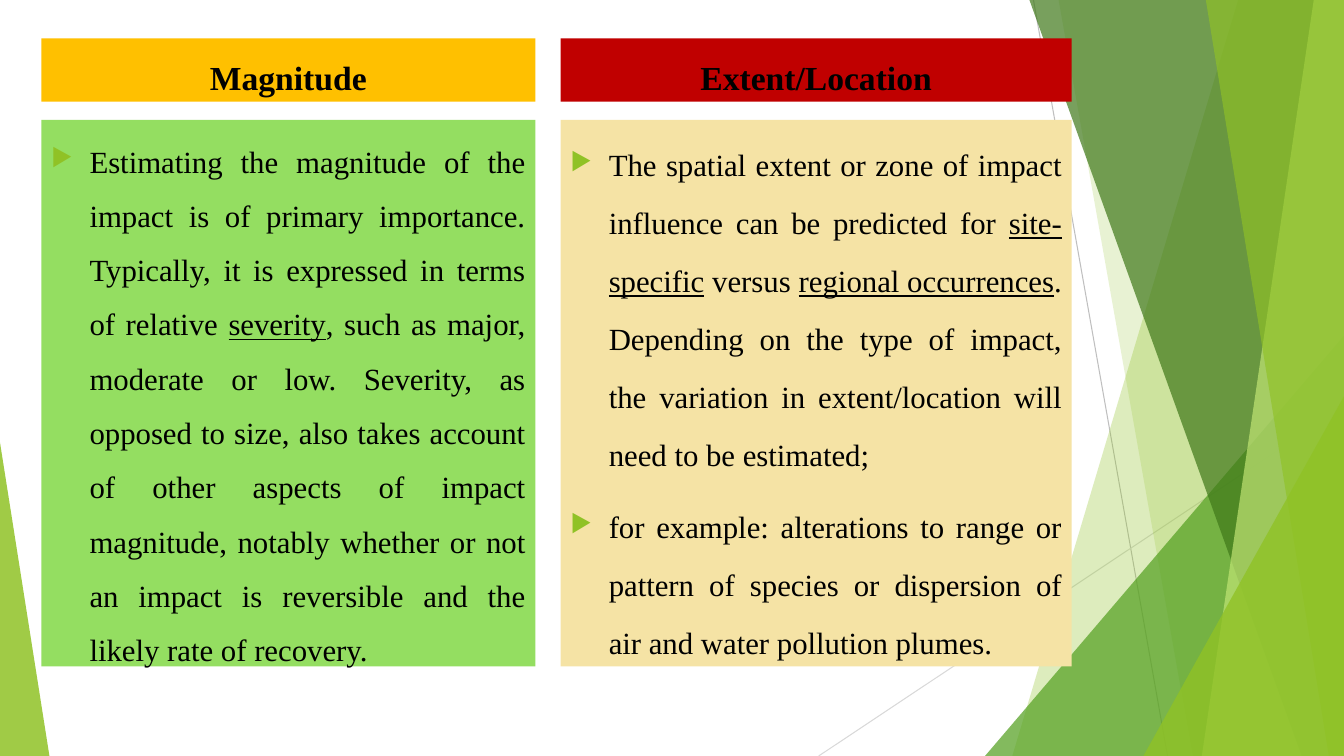
import pptx
import pptx.dml.color
import pptx.enum.shapes
import pptx.enum.text
import pptx.oxml
import pptx.oxml.ns
import pptx.util
from pptx.util import Inches

RGBColor = pptx.dml.color.RGBColor
Shape = pptx.enum.shapes.MSO_SHAPE
Anchor = pptx.enum.text.MSO_ANCHOR
Align = pptx.enum.text.PP_ALIGN

BLACK = RGBColor(0x00, 0x00, 0x00)
LIME = RGBColor(0x90, 0xC2, 0x26)
LEAF = RGBColor(0x54, 0xA0, 0x21)
FOREST = RGBColor(0x3F, 0x78, 0x19)
PALE_LIME = RGBColor(0xC0, 0xE4, 0x74)
GREY = RGBColor(0xBF, 0xBF, 0xBF)
LIGHT_GREY = RGBColor(0xD9, 0xD9, 0xD9)
AMBER = RGBColor(0xFF, 0xC0, 0x00)
RED = RGBColor(0xC0, 0x00, 0x00)
MINT = RGBColor(0x94, 0xDE, 0x61)
SAND = RGBColor(0xF5, 0xE3, 0xA5)

WIDTH, HEIGHT = 13.33, 7.5
HEADING_TOP, HEADING_HEIGHT = 0.38, 0.63
BODY_TOP, BODY_HEIGHT = 1.19, 5.42

RAYS = [
    ((10.25, 0), (11.58, HEIGHT), GREY),
    ((WIDTH, 4.03), (8.12, HEIGHT), LIGHT_GREY),
]
BACK_BANDS = [(12.28, 10.04, LIME, 30), (10.5, 11.83, LIME, 20)]
FRONT_BANDS = [
    (10.21, 12.91, FOREST, 70),
    (13.03, 11.92, PALE_LIME, 70),
    (11.96, 13.18, LIME, 65),
]
COLUMNS = [
    {
        "left": 0.41, "width": 4.9, "heading": "Magnitude",
        "heading_fill": AMBER, "body_fill": MINT, "spacing": 1.47,
        "items": [[
            ("Estimating the magnitude of the impact is of primary importance. "
             "Typically, it is expressed in terms of relative ", False),
            ("severity", True),
            (", such as major, moderate or low. Severity, as opposed to size, "
             "also takes account of other aspects of impact magnitude, notably "
             "whether or not an impact is reversible and the likely rate of "
             "recovery.", False),
        ]],
    },
    {
        "left": 5.56, "width": 5.07, "heading": "Extent/Location",
        "heading_fill": RED, "body_fill": SAND, "spacing": 1.57,
        "items": [
            [
                ("The spatial extent or zone of impact influence can be "
                 "predicted for ", False),
                ("site-specific", True),
                (" versus ", False),
                ("regional occurrences", True),
                (". Depending on the type of impact, the variation in "
                 "extent/location will need to be estimated;", False),
            ],
            [("for example: alterations to range or pattern of species or "
              "dispersion of air and water pollution plumes.", False)],
        ],
    },
]


class SlideBuilder:
    """Hold the text style and current slide, and draw each kind of element."""

    def __init__(self, page):
        self.page = page
        self.font = {"name": "Times New Roman", "size": pptx.util.Pt(22)}

    def element(self, parent, tag, **attributes):
        child = pptx.oxml.parse_xml(f"<a:{tag} {pptx.oxml.ns.nsdecls('a')}/>")
        for name, value in attributes.items():
            child.set(name, str(value))
        parent.append(child)
        return child

    def paint(self, shape, color, opacity=100):
        shape.shadow.inherit = False
        shape.fill.solid()
        shape.fill.fore_color.rgb = color
        shape.line.fill.background()
        if opacity < 100:
            swatch = shape._element.spPr.find(
                ".//" + pptx.oxml.ns.qn("a:srgbClr"))
            self.element(swatch, "alpha", val=opacity * 1000)

    def ray(self, start, end, color):
        line = self.page.shapes.add_connector(
            pptx.enum.shapes.MSO_CONNECTOR.STRAIGHT,
            *map(Inches, start + end))
        line.line.color.rgb = color
        line.line.width = pptx.util.Pt(0.75)
        self.element(line._element.spPr, "effectLst")

    def band(self, top_x, bottom_x, color, opacity):
        points = [(Inches(x), Inches(y)) for x, y in (
            (top_x, 0), (WIDTH, 0), (WIDTH, HEIGHT), (bottom_x, HEIGHT))]
        outline = self.page.shapes.build_freeform(*points[0])
        outline.add_line_segments(points[1:], close=True)
        self.paint(outline.convert_to_shape(), color, opacity)

    def triangle(self, left, top, width, apex, color, opacity):
        shape = self.page.shapes.add_shape(
            Shape.ISOSCELES_TRIANGLE, Inches(left), Inches(top),
            Inches(width), Inches(HEIGHT - top))
        shape.adjustments[0] = apex
        self.paint(shape, color, opacity)

    def panel(self, left, top, width, height, color, anchor):
        box = self.page.shapes.add_shape(
            Shape.RECTANGLE, *map(Inches, (left, top, width, height)))
        self.paint(box, color)
        box.text_frame.word_wrap = True
        box.text_frame.vertical_anchor = anchor
        return box.text_frame

    def add_span(self, para, text, **changes):
        span = para.add_run()
        span.text = text
        for name, value in {**self.font, **changes}.items():
            setattr(span.font, name, value)
        span.font.color.rgb = BLACK

    def heading(self, left, width, text, color):
        frame = self.panel(left, HEADING_TOP, width, HEADING_HEIGHT, color,
                           Anchor.BOTTOM)
        para = frame.paragraphs[0]
        para.alignment = Align.CENTER
        self.add_span(para, text, size=pptx.util.Pt(24), bold=True)

    def bullets(self, left, width, items, color, spacing):
        frame = self.panel(left, BODY_TOP, width, BODY_HEIGHT, color,
                           Anchor.TOP)
        layout = {"alignment": Align.JUSTIFY, "line_spacing": spacing,
                  "space_before": pptx.util.Pt(10)}
        for index, item in enumerate(items):
            para = frame.add_paragraph() if index else frame.paragraphs[0]
            for name, value in layout.items():
                setattr(para, name, value)
            properties = para._p.get_or_add_pPr()
            properties.set("marL", str(Inches(0.38)))
            properties.set("indent", str(Inches(-0.38)))
            self.element(self.element(properties, "buClr"), "srgbClr", val=LIME)
            self.element(properties, "buSzPct", val=80000)
            self.element(properties, "buChar", char="▶")
            for text, underlined in item:
                self.add_span(para, text, underline=underlined)


def main():
    deck = pptx.Presentation()
    deck.slide_width, deck.slide_height = Inches(WIDTH), Inches(HEIGHT)
    builder = SlideBuilder(deck.slides.add_slide(deck.slide_layouts[6]))
    for ray in RAYS:
        builder.ray(*ray)
    for band in BACK_BANDS:
        builder.band(*band)
    builder.triangle(9.77, 3.33, 3.56, 1, LEAF, 72)
    for band in FRONT_BANDS:
        builder.band(*band)
    builder.triangle(11.34, 3.93, 1.99, 1, LIME, 80)
    builder.triangle(0, 4.39, 0.49, 0, LIME, 85)
    for column in COLUMNS:
        left, width = column["left"], column["width"]
        builder.heading(left, width, column["heading"], column["heading_fill"])
        builder.bullets(left, width, column["items"], column["body_fill"],
                        column["spacing"])
    deck.save("out.pptx")


if __name__ == "__main__":
    main()
